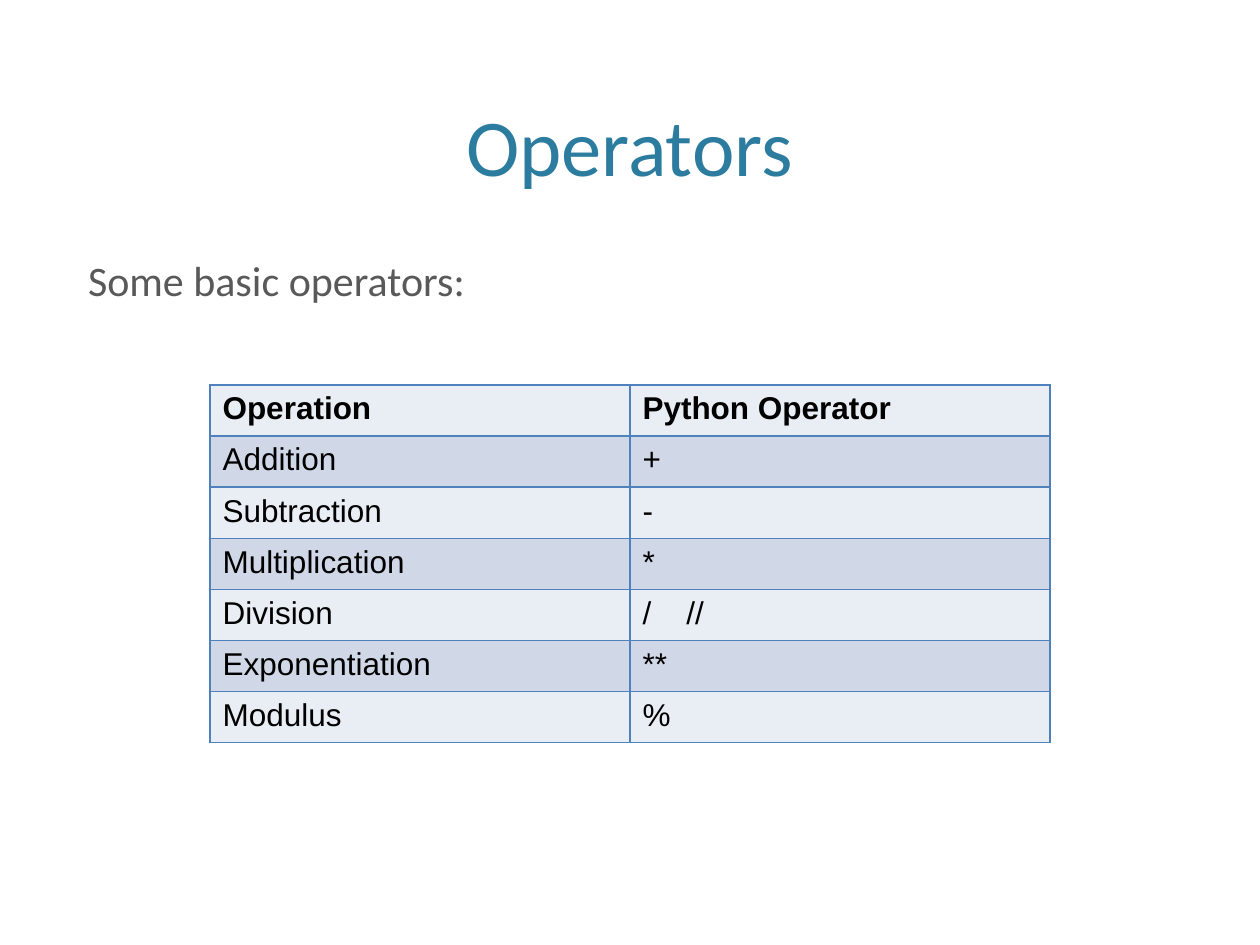
from lxml import etree
from pptx import Presentation
from pptx.dml.color import RGBColor
from pptx.enum import text
from pptx.oxml.ns import qn
from pptx.util import Pt

COLORS = {
    "title": "2C7C9F",
    "body": "595959",
    "cell": "000000",
    "border": "4F81BD",
    "light": "E9EDF4",
    "dark": "D0D8E8",
}
OPERATORS = [
    ("Operation", "Python Operator"),
    ("Addition", "+"),
    ("Subtraction", "-"),
    ("Multiplication", "*"),
    ("Division", "/\t//"),
    ("Exponentiation", "**"),
    ("Modulus", "%"),
]


def style(paragraph, font_name, size, color, bold=False):
    for run in paragraph.runs:
        run.font.name = font_name
        run.font.size = Pt(size)
        run.font.bold = bold
        run.font.color.rgb = RGBColor.from_string(COLORS[color])


def add_borders(cell):
    properties = cell._tc.get_or_add_tcPr()
    for position, side in enumerate(("lnL", "lnR", "lnT", "lnB")):
        line = etree.Element(qn(f"a:{side}"), w=str(Pt(1)))
        fill = etree.SubElement(line, qn("a:solidFill"))
        etree.SubElement(fill, qn("a:srgbClr"), val=COLORS["border"])
        properties.insert(position, line)


prs = Presentation()
prs.slide_width, prs.slide_height = Pt(720), Pt(540)
slide = prs.slides.add_slide(prs.slide_layouts[6])

# Title
title = slide.shapes.add_textbox(Pt(43.2), Pt(8.6), Pt(633), Pt(105.1)).text_frame
title.word_wrap = True
title.vertical_anchor = text.MSO_ANCHOR.BOTTOM
title.text = "Operators"
title.paragraphs[0].alignment = text.PP_ALIGN.CENTER
style(title.paragraphs[0], "Calibri", 46, "title")

# Introduction
intro = slide.shapes.add_textbox(Pt(43.2), Pt(147.6), Pt(633), Pt(320.4)).text_frame
intro.word_wrap = True
intro.text = "Some basic operators:"
intro.paragraphs[0].line_spacing = 0.8
style(intro.paragraphs[0], "Calibri", 24, "body")

# Operator table
row_height = 29.2
operator_table = slide.shapes.add_table(
    len(OPERATORS), 2, Pt(120), Pt(220), Pt(480), Pt(row_height * len(OPERATORS))
).table
for row, labels in enumerate(OPERATORS):
    operator_table.rows[row].height = Pt(row_height)
    for column, label in enumerate(labels):
        cell = operator_table.cell(row, column)
        cell.fill.solid()
        cell.fill.fore_color.rgb = RGBColor.from_string(COLORS["dark" if row % 2 else "light"])
        add_borders(cell)
        paragraph = cell.text_frame.paragraphs[0]
        paragraph.text = label
        if "\t" in label:
            tabs = etree.SubElement(paragraph._p.get_or_add_pPr(), qn("a:tabLst"))
            etree.SubElement(tabs, qn("a:tab"), pos=str(Pt(25)), algn="l")
        style(paragraph, "Arial", 18, "cell", bold=row == 0)

prs.save("out.pptx")
